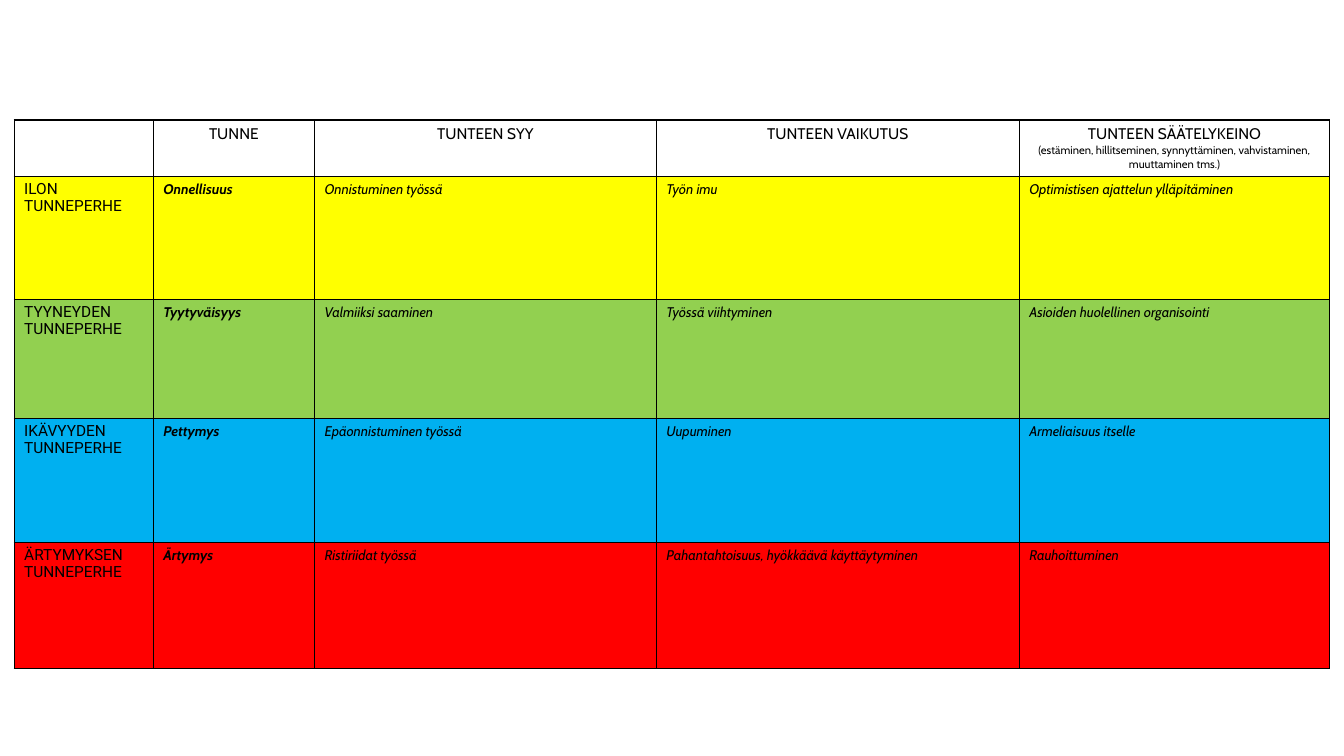
from lxml import etree
from pptx import Presentation
from pptx import util as u
from pptx.dml.color import RGBColor
from pptx.enum import text
from pptx.oxml import ns

INK = {"black": "000000", "white": "FFFFFF", "joy": "FFFF00",
       "calm": "92D050", "sad": "00B0F0", "anger": "FF0000"}
WIDTHS = [1.38, 1.6, 3.39, 3.6, 3.08]
HEIGHTS = [0.28, 1.22, 1.18, 1.23, 1.25]
HEADS = ["", "TUNNE", "TUNTEEN SYY", "TUNTEEN VAIKUTUS", "TUNTEEN SÄÄTELYKEINO"]
HINT = "(estäminen, hillitseminen, synnyttäminen, vahvistaminen, muuttaminen tms.)"
MOODS = [
    ("joy", "ILON TUNNEPERHE", "Onnellisuus", "Onnistuminen työssä",
     "Työn imu", "Optimistisen ajattelun ylläpitäminen"),
    ("calm", "TYYNEYDEN TUNNEPERHE", "Tyytyväisyys", "Valmiiksi saaminen",
     "Työssä viihtyminen", "Asioiden huolellinen organisointi"),
    ("sad", "IKÄVYYDEN TUNNEPERHE", "Pettymys", "Epäonnistuminen työssä",
     "Uupuminen", "Armeliaisuus itselle"),
    ("anger", "ÄRTYMYKSEN TUNNEPERHE", "Ärtymys", "Ristiriidat työssä",
     "Pahantahtoisuus, hyökkäävä käyttäytyminen", "Rauhoittuminen"),
]


def write(para, words, size=11, face="Cabin", bold=False, slant=False,
          align=text.PP_ALIGN.LEFT, lead=None):
    para.alignment = align
    if lead:
        para.line_spacing = u.Pt(lead)
    run = para.add_run()
    run.text = words
    font = run.font
    font.size, font.name = u.Pt(size), face
    font.bold, font.italic = bold, slant
    font.color.rgb = RGBColor.from_string(INK["black"])


class Deck:
    def __init__(self):
        self.show = Presentation()
        self.show.slide_width = u.Inches(13.33)
        self.show.slide_height = u.Inches(7.5)
        self.slide = self.show.slides.add_slide(self.show.slide_layouts[6])

    def table(self, left, top, height, widths, heights):
        frame = self.slide.shapes.add_table(
            len(heights), len(widths), u.Inches(left), u.Inches(top),
            u.Inches(sum(widths)), u.Inches(height))
        grid = frame.table
        grid.first_row = grid.horz_banding = False
        for col, width in zip(grid.columns, widths):
            col.width = u.Inches(width)
        for row, tall in zip(grid.rows, heights):
            row.height = u.Inches(tall)
        frame.height = u.Inches(height)
        return grid

    def cell(self, cell, fill):
        props = cell._tc.get_or_add_tcPr()
        for side in ("lnL", "lnR", "lnT", "lnB"):
            line = etree.SubElement(props, ns.qn("a:" + side), w=str(u.Pt(1)))
            solid = etree.SubElement(line, ns.qn("a:solidFill"))
            etree.SubElement(solid, ns.qn("a:srgbClr"), val=INK["black"])
        cell.fill.solid()
        cell.fill.fore_color.rgb = RGBColor.from_string(INK[fill])
        return cell.text_frame


def main():
    deck = Deck()
    grid = deck.table(0.14, 1.19, 5.43, WIDTHS, HEIGHTS)
    mid = text.PP_ALIGN.CENTER
    for col, head in enumerate(HEADS):
        frame = deck.cell(grid.cell(0, col), "white")
        if head:
            write(frame.paragraphs[0], head, align=mid)
    write(frame.add_paragraph(), HINT, size=8, align=mid)
    for row, (fill, *words) in enumerate(MOODS, 1):
        for col, word in enumerate(words):
            para = deck.cell(grid.cell(row, col), fill).paragraphs[0]
            if col == 0:
                write(para, word, face="Roboto", lead=12)
            else:
                write(para, word, size=10, bold=col == 1, slant=True)
    deck.show.save("out.pptx")


if __name__ == "__main__":
    main()
